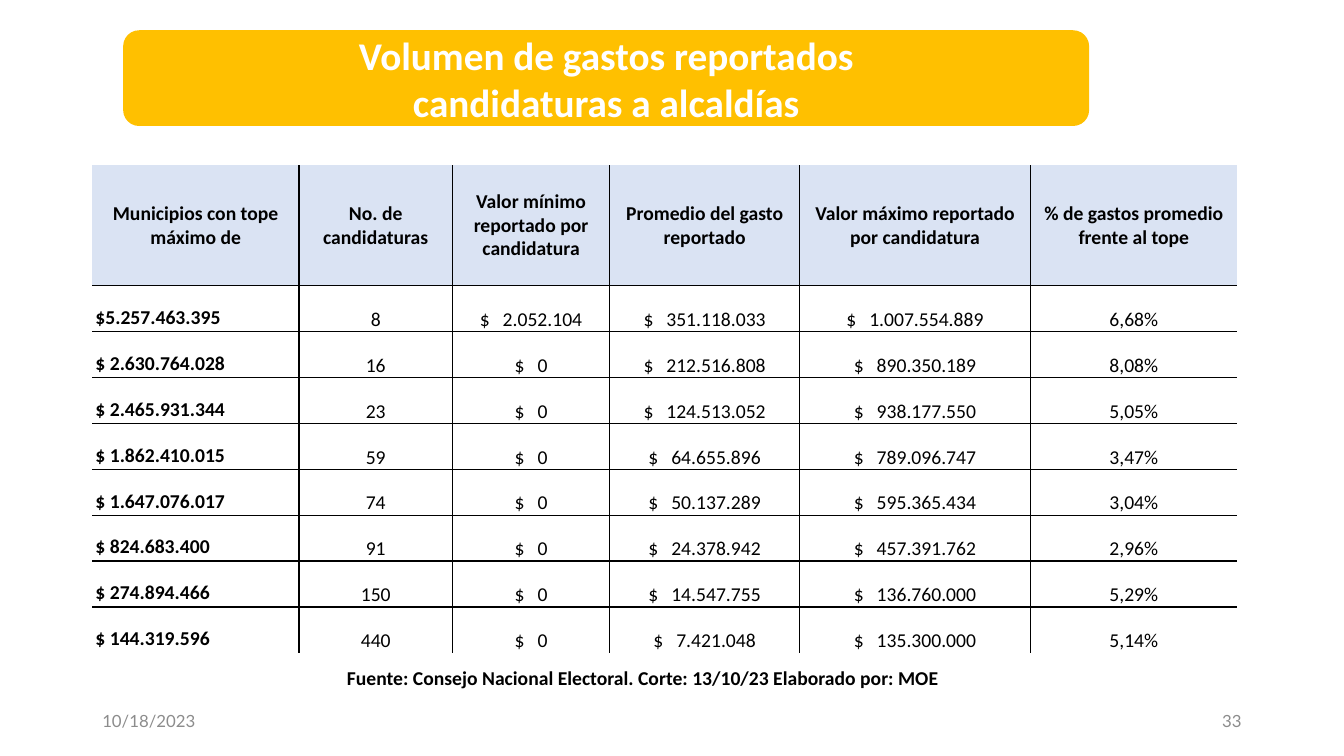
from lxml.etree import SubElement
from pptx import Presentation
from pptx.dml.color import RGBColor
from pptx.enum.shapes import MSO_SHAPE
from pptx.enum.text import MSO_ANCHOR, PP_ALIGN
from pptx.oxml.ns import qn
from pptx.util import Pt

TITLE = ["Volumen de gastos reportados", "candidaturas a alcaldías"]
SOURCE = "Fuente: Consejo Nacional Electoral. Corte: 13/10/23 Elaborado por: MOE"
DATE, PAGE = "10/18/2023", "33"
HEADERS = ["Municipios con tope máximo de", "No. de candidaturas",
           "Valor mínimo reportado por candidatura", "Promedio del gasto reportado",
           "Valor máximo reportado por candidatura", "% de gastos promedio frente al tope"]
SPENDING = [
    ("$5.257.463.395", "8", "$ 2.052.104", "$ 351.118.033", "$ 1.007.554.889", "6,68%"),
    ("$ 2.630.764.028", "16", "$ 0", "$ 212.516.808", "$ 890.350.189", "8,08%"),
    ("$ 2.465.931.344", "23", "$ 0", "$ 124.513.052", "$ 938.177.550", "5,05%"),
    ("$ 1.862.410.015", "59", "$ 0", "$ 64.655.896", "$ 789.096.747", "3,47%"),
    ("$ 1.647.076.017", "74", "$ 0", "$ 50.137.289", "$ 595.365.434", "3,04%"),
    ("$ 824.683.400", "91", "$ 0", "$ 24.378.942", "$ 457.391.762", "2,96%"),
    ("$ 274.894.466", "150", "$ 0", "$ 14.547.755", "$ 136.760.000", "5,29%"),
    ("$ 144.319.596", "440", "$ 0", "$ 7.421.048", "$ 135.300.000", "5,14%"),
]
COL_WIDTHS = [147.6, 109.6, 112.4, 135.6, 165, 147.6]
HEADER_HEIGHT, ROW_HEIGHT = 86, 32.8
LEFT, TOP = 66, 118
BLACK, WHITE, GRAY, AMBER, PALE_BLUE = "000000", "FFFFFF", "8C8C8C", "FFC000", "DAE3F3"


def color(hex_code):
    return RGBColor.from_string(hex_code)


def style(p, size, hex_code, bold=False, align=PP_ALIGN.LEFT, font="Calibri"):
    p.alignment = align
    p.font.size, p.font.name, p.font.bold = Pt(size), font, bold
    p.font.color.rgb = color(hex_code)


def add_text(s, box, text, *look, anchor=MSO_ANCHOR.TOP):
    tf = s.shapes.add_textbox(*map(Pt, box)).text_frame
    tf.word_wrap = True
    tf.vertical_anchor = anchor
    tf.text = text
    style(tf.paragraphs[0], *look)


def set_borders(cell, visible):
    tcPr = cell._tc.get_or_add_tcPr()
    for side, shown in zip("LRTB", visible):
        ln = SubElement(tcPr, qn(f"a:ln{side}"), w=str(Pt(1)))
        if shown:
            fill = SubElement(ln, qn("a:solidFill"))
            SubElement(fill, qn("a:srgbClr"), val=BLACK)
        else:
            SubElement(ln, qn("a:noFill"))


def write_cell(cell, text, is_header, is_label):
    p = cell.text_frame.paragraphs[0]
    if text.startswith("$ ") and not is_label:
        sign = p.add_run()
        sign.text = "$ "
        sign._r.get_or_add_rPr().set("spc", "300")
        text = text[2:]
    p.add_run().text = text
    left_aligned = is_label and not is_header
    style(p, 14, BLACK, is_header or is_label,
          PP_ALIGN.LEFT if left_aligned else PP_ALIGN.CENTER)
    cell.vertical_anchor = MSO_ANCHOR.MIDDLE if is_header else MSO_ANCHOR.BOTTOM
    wide = is_header or is_label
    cell.margin_left = cell.margin_right = Pt(2.2 if wide else 0.7)
    cell.margin_top = Pt(1.4 if wide else 0.7)
    cell.margin_bottom = Pt(1.4 if wide else 0)


def add_spending_table(s):
    rows = [HEADERS, *SPENDING]
    heights = [HEADER_HEIGHT] + [ROW_HEIGHT] * len(SPENDING)
    last_row, last_col = len(rows) - 1, len(HEADERS) - 1
    table = s.shapes.add_table(len(rows), len(HEADERS), Pt(LEFT), Pt(TOP),
                               Pt(sum(COL_WIDTHS)), Pt(sum(heights))).table
    table.horz_banding = False
    for col, width in zip(table.columns, COL_WIDTHS):
        col.width = Pt(width)
    for i, (row, height) in enumerate(zip(rows, heights)):
        table.rows[i].height = Pt(height)
        for j, text in enumerate(row):
            cell = table.cell(i, j)
            write_cell(cell, text, i == 0, j == 0)
            set_borders(cell, (j > 0, j < last_col, i > 0, i < last_row))
            if i == 0:
                cell.fill.solid()
                cell.fill.fore_color.rgb = color(PALE_BLUE)
            else:
                cell.fill.background()


def add_title(s):
    banner = s.shapes.add_shape(MSO_SHAPE.ROUNDED_RECTANGLE, Pt(88), Pt(21.6), Pt(690), Pt(68.4))
    banner.shadow.inherit = False
    banner.fill.solid()
    banner.fill.fore_color.rgb = color(AMBER)
    banner.line.fill.background()
    tf = banner.text_frame
    tf.vertical_anchor = MSO_ANCHOR.MIDDLE
    tf.text = "\n".join(TITLE)
    for p in tf.paragraphs:
        style(p, 28, WHITE, True, PP_ALIGN.CENTER)


def main():
    """Build the slide on reported mayoral campaign spending."""
    prs = Presentation()
    prs.slide_width, prs.slide_height = Pt(960), Pt(540)
    s = prs.slides.add_slide(prs.slide_layouts[6])
    add_text(s, (LEFT, 500.5, 216, 28.8), DATE, 12, GRAY, False, PP_ALIGN.LEFT, "Lato",
             anchor=MSO_ANCHOR.MIDDLE)
    add_text(s, (678, 500.5, 216, 28.8), PAGE, 12, GRAY, False, PP_ALIGN.RIGHT, "Lato",
             anchor=MSO_ANCHOR.MIDDLE)
    add_spending_table(s)
    add_text(s, (161.3, 472.3, 596, 24.5), SOURCE, 14, BLACK, True, PP_ALIGN.CENTER)
    add_title(s)
    prs.save("out.pptx")


if __name__ == "__main__":
    main()
